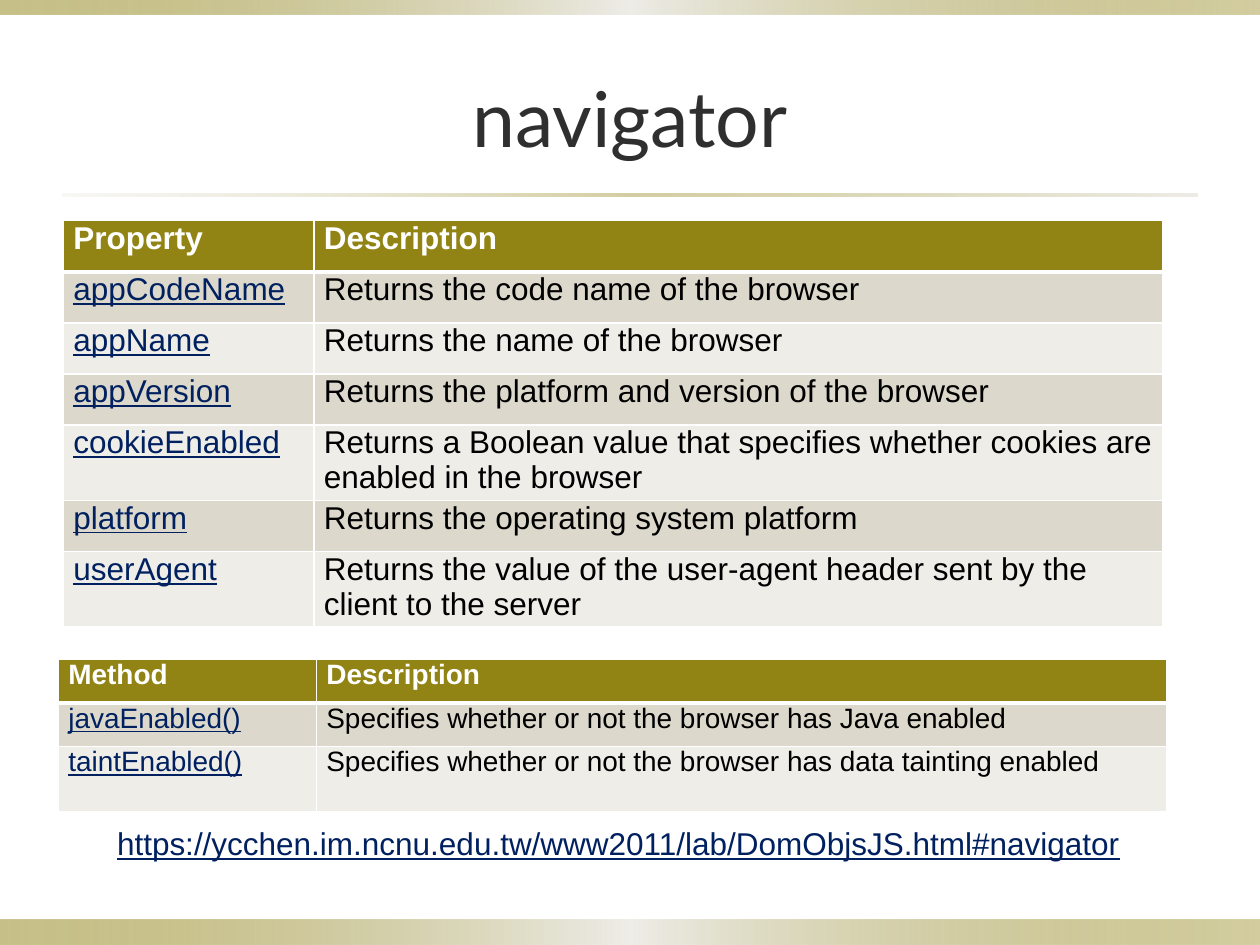
from lxml.etree import SubElement
from pptx import Presentation
from pptx.dml.color import RGBColor
from pptx.enum.shapes import MSO_SHAPE
from pptx.enum.text import MSO_ANCHOR, PP_ALIGN
from pptx.oxml import parse_xml
from pptx.oxml.ns import nsdecls, qn
from pptx.util import Cm, Pt

COLORS = {
    "olive": "918415",
    "band": "DCD9CC",
    "light": "EEEDE8",
    "white": "FFFFFF",
    "link": "002060",
    "text": "000000",
    "title": "2F2F2F",
}
BAR_STOPS = [(0, "olive", 50), (50, "light", 100), (100, "olive", 40)]
DIVIDER_STOPS = [(0, "band", 20), (50, "olive", 40), (100, "band", 50)]

PROPERTIES = [
    ("Property", "Description"),
    ("appCodeName", "Returns the code name of the browser"),
    ("appName", "Returns the name of the browser"),
    ("appVersion", "Returns the platform and version of the browser"),
    ("cookieEnabled", "Returns a Boolean value that specifies whether cookies are "
                      "enabled in the browser"),
    ("platform", "Returns the operating system platform"),
    ("userAgent", "Returns the value of the user-agent header sent by the client "
                  "to the server"),
]
METHODS = [
    ("Method", "Description"),
    ("javaEnabled()", "Specifies whether or not the browser has Java enabled"),
    ("taintEnabled()", "Specifies whether or not the browser has data tainting enabled"),
]


class SlideBuilder:
    font_name = "Arial"
    title_font = "Lato"

    def __init__(self, slide):
        self.slide = slide

    def style(self, paragraph, size, color, name=None, bold=False, underline=False):
        font = paragraph.font
        font.name = name or self.font_name
        font.size = Pt(size)
        font.bold = bold
        font.underline = underline
        font.color.rgb = RGBColor.from_string(COLORS[color])

    def gradient_bar(self, left, top, width, height, stops):
        shape = self.slide.shapes.add_shape(
            MSO_SHAPE.RECTANGLE, Cm(left), Cm(top), Cm(width), Cm(height))
        shape.shadow.inherit = False
        shape.line.fill.background()
        stop_xml = "".join(
            f'<a:gs pos="{position * 1000}"><a:srgbClr val="{COLORS[color]}">'
            f'<a:alpha val="{alpha * 1000}"/></a:srgbClr></a:gs>'
            for position, color, alpha in stops)
        gradient = parse_xml(
            f'<a:gradFill {nsdecls("a")} rotWithShape="1"><a:gsLst>{stop_xml}</a:gsLst>'
            '<a:lin ang="0" scaled="0"/></a:gradFill>')
        shape.element.spPr.find(qn("a:prstGeom")).addnext(gradient)

    def title(self, text, left, top, width, height):
        shape = self.slide.shapes.title
        shape.left, shape.top = Cm(left), Cm(top)
        shape.width, shape.height = Cm(width), Cm(height)
        frame = shape.text_frame
        frame.text = text
        frame.vertical_anchor = MSO_ANCHOR.MIDDLE
        frame.paragraphs[0].alignment = PP_ALIGN.CENTER
        self.style(frame.paragraphs[0], 44, "title", self.title_font)

    def borders(self, cell, row):
        properties = cell._tc.get_or_add_tcPr()
        widths = {"lnL": 1, "lnR": 1, "lnT": 3 if row == 1 else 1,
                  "lnB": 3 if row == 0 else 1}
        for tag, width in widths.items():
            line = SubElement(properties, qn(f"a:{tag}"), w=str(Pt(width)))
            fill = SubElement(line, qn("a:solidFill"))
            SubElement(fill, qn("a:srgbClr"), val=COLORS["white"])

    def table(self, rows, left, top, column_widths, row_heights, size):
        table = self.slide.shapes.add_table(
            len(rows), len(column_widths), Cm(left), Cm(top),
            Cm(sum(column_widths)), Cm(sum(row_heights))).table
        table.first_row = table.horz_banding = False
        for column, width in zip(table.columns, column_widths):
            column.width = Cm(width)
        for row, (texts, height) in enumerate(zip(rows, row_heights)):
            table.rows[row].height = Cm(height)
            header = row == 0
            fill = "olive" if header else ("light", "band")[row % 2]
            for column, text in enumerate(texts):
                cell = table.cell(row, column)
                cell.margin_left = Cm(0.2)
                cell.margin_top = cell.margin_right = cell.margin_bottom = 0
                self.borders(cell, row)
                cell.fill.solid()
                cell.fill.fore_color.rgb = RGBColor.from_string(COLORS[fill])
                cell.text = text
                is_link = not header and column == 0
                color = "white" if header else "link" if is_link else "text"
                self.style(cell.text_frame.paragraphs[0], size, color,
                           bold=header, underline=is_link)

    def address(self, text, left, top, width, height):
        shape = self.slide.shapes.add_textbox(Cm(left), Cm(top), Cm(width), Cm(height))
        frame = shape.text_frame
        frame.word_wrap = True
        frame.margin_right = 0
        frame.text = text
        self.style(frame.paragraphs[0], 18, "link", underline=True)


def main():
    presentation = Presentation()
    presentation.slide_width, presentation.slide_height = Cm(25.4), Cm(19.05)
    builder = SlideBuilder(presentation.slides.add_slide(presentation.slide_layouts[5]))

    # Edge bars and divider
    builder.gradient_bar(0, 18.54, 25.4, 0.51, BAR_STOPS)
    builder.gradient_bar(0, 0, 25.4, 0.3, BAR_STOPS)
    builder.gradient_bar(1.27, 3.91, 22.86, 0.06, DIVIDER_STOPS)

    # Title
    builder.title("navigator", 1.27, 0.76, 22.86, 3.18)

    # Property and method tables
    single, double = 1.03, 1.52
    builder.table(PROPERTIES, 1.28, 4.45, [5.05, 17.1],
                  [single] * 4 + [double, single, double], 18)
    builder.table(METHODS, 1.18, 13.29, [5.2, 17.14], [0.88, 0.88, 1.32], 16)

    # Source address
    builder.address("https://ycchen.im.ncnu.edu.tw/www2011/lab/DomObjsJS.html#navigator",
                    2.11, 16.48, 20.73, 1.8)

    presentation.save("out.pptx")


if __name__ == "__main__":
    main()
